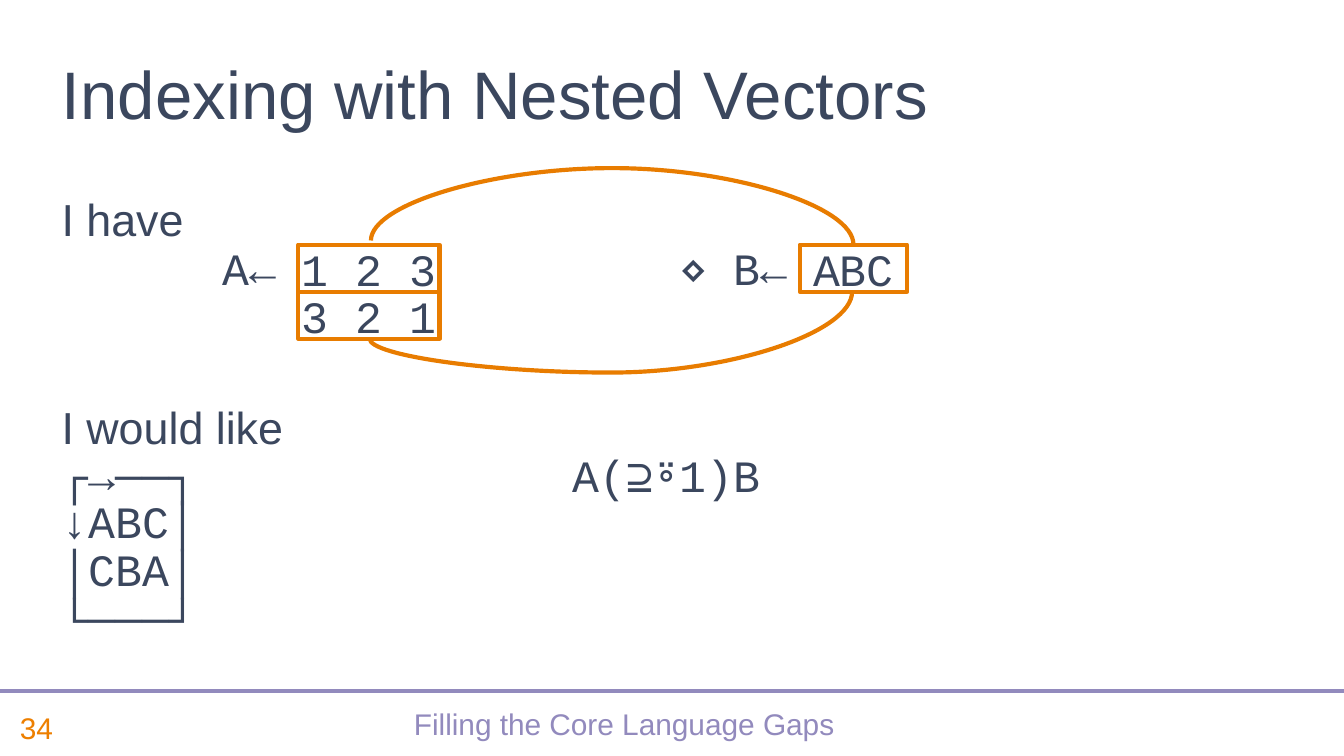
from lxml import etree
from pptx import Presentation
from pptx.dml.color import RGBColor
from pptx.enum.shapes import MSO_CONNECTOR as CONNECTOR, MSO_SHAPE as SHAPE
from pptx.enum.text import MSO_ANCHOR as ANCHOR, PP_ALIGN as ALIGN
from pptx.oxml.ns import qn
from pptx.util import Inches, Pt

INK = RGBColor(0x3B, 0x47, 0x5E)
ORANGE = RGBColor(0xE8, 0x7C, 0x00)
NUMBER_ORANGE = RGBColor(0xED, 0x7F, 0x00)
PURPLE = RGBColor(0x92, 0x8A, 0xBD)
WHITE = RGBColor(0xFF, 0xFF, 0xFF)
SANS, MONO = "Arial", "Courier New"


def write(paragraph, text, font=SANS, size=24, color=INK, align=ALIGN.LEFT,
          spacing=1.0, before=0, tabs=()):
    """Fill a paragraph with formatted text; tabs are in inches."""
    paragraph.text = text
    paragraph.alignment = align
    paragraph.line_spacing = spacing
    paragraph.space_before = Pt(before)
    if tabs:
        tab_list = etree.SubElement(paragraph._p.get_or_add_pPr(), qn("a:tabLst"))
        for position in tabs:
            etree.SubElement(tab_list, qn("a:tab"), pos=str(Inches(position)), algn="l")
    for run in paragraph.runs:
        run.font.name, run.font.size = font, Pt(size)
        run.font.color.rgb = color


class SlideBuilder:
    line_width = Pt(2.25)

    def __init__(self, slide):
        self.slide = slide

    def title(self, text, left, top, width, height):
        title = self.slide.shapes.title
        title.left, title.top = Inches(left), Inches(top)
        title.width, title.height = Inches(width), Inches(height)
        title.text_frame.vertical_anchor = ANCHOR.BOTTOM
        write(title.text_frame.paragraphs[0], text, size=36)

    def text(self, lines, left, top, width, height, anchor=ANCHOR.TOP):
        """Add a text box from (text, format) pairs, one per paragraph."""
        box = self.slide.shapes.add_textbox(
            Inches(left), Inches(top), Inches(width), Inches(height))
        frame = box.text_frame
        frame.word_wrap = True
        frame.vertical_anchor = anchor
        for index, (text, style) in enumerate(lines):
            paragraph = frame.add_paragraph() if index else frame.paragraphs[0]
            write(paragraph, text, **style)

    def cell(self, text, left, top, width, height=0.35, fill=None):
        cell = self.slide.shapes.add_shape(
            SHAPE.RECTANGLE, Inches(left), Inches(top), Inches(width), Inches(height))
        cell.shadow.inherit = False
        if fill is None:
            cell.fill.background()
        else:
            cell.fill.solid()
            cell.fill.fore_color.rgb = fill
        cell.line.color.rgb, cell.line.width = ORANGE, self.line_width
        frame = cell.text_frame
        frame.margin_left = frame.margin_right = frame.margin_top = frame.margin_bottom = 0
        frame.vertical_anchor = ANCHOR.MIDDLE
        write(frame.paragraphs[0], text, font=MONO, align=ALIGN.CENTER)

    def line(self, left, top, width, height, color, kind=CONNECTOR.STRAIGHT):
        line = self.slide.shapes.add_connector(
            kind, Inches(left), Inches(top), Inches(left + width), Inches(top + height))
        line.line.color.rgb, line.line.width = color, self.line_width
        etree.SubElement(line._element.spPr, qn("a:effectLst"))
        return line

    def arc(self, left, top, width, height, turn, bulge, flip=False):
        """Add a curve turned by degrees; bulge is a multiple of its width."""
        arc = self.line(left, top, width, height, ORANGE, CONNECTOR.CURVE)
        properties = arc._element.spPr
        frame = properties.find(qn("a:xfrm"))
        frame.set("rot", str(turn * 60000))
        if flip:
            frame.set("flipV", "1")
        guides = properties.find(qn("a:prstGeom")).get_or_add_avLst()
        etree.SubElement(guides, qn("a:gd"), name="adj1", fmla=f"val {round(bulge * 100000)}")


def main():
    deck = Presentation()
    # Widescreen, 16:9
    deck.slide_width = Inches(10)
    deck.slide_height = deck.slide_width * 9 // 16
    layout = deck.slide_layouts[5]
    builder = SlideBuilder(deck.slides.add_slide(layout))

    # Footer
    builder.text([("Filling the Core Language Gaps",
                   dict(size=16, color=PURPLE, align=ALIGN.CENTER, spacing=0.8))],
                 0.78, 5.19, 7.73, 0.44, ANCHOR.MIDDLE)
    builder.text([("34", dict(size=16, color=NUMBER_ORANGE))],
                 0.05, 5.19, 0.73, 0.44, ANCHOR.MIDDLE)
    builder.line(0, 5.14, 10, 0, PURPLE)

    # Title and body
    builder.title("Indexing with Nested Vectors", 0.36, 0.29, 7.66, 0.75)
    code = dict(font=MONO, spacing=0.84, before=2)
    builder.text([
        ("I have", {}),
        ("\tA←\t⋄ B←", dict(code, tabs=(1.2, 4.6))),
        ("I would like", dict(before=56)),
        ("┌→──┐\tA(⊇⍤1)B\v↓ABC│", dict(code, tabs=(3.8,))),
        ("│CBA│", code),
        ("└───┘", code),
    ], 0.36, 1.38, 9.33, 3.95)

    # Index rows and the indexed vector
    builder.cell("1 2 3", 2.22, 1.82, 1.05)
    builder.cell("3 2 1", 2.22, 2.17, 1.05, fill=WHITE)
    builder.cell("ABC", 5.95, 1.82, 0.8)

    # Arcs pairing each row with the vector
    builder.arc(4.37, 0.55, 0.35, 3.59, turn=90, bulge=1.72)
    builder.arc(4.54, 0.01, 0.03, 3.59, turn=270, bulge=19, flip=True)

    deck.save("out.pptx")


if __name__ == "__main__":
    main()
